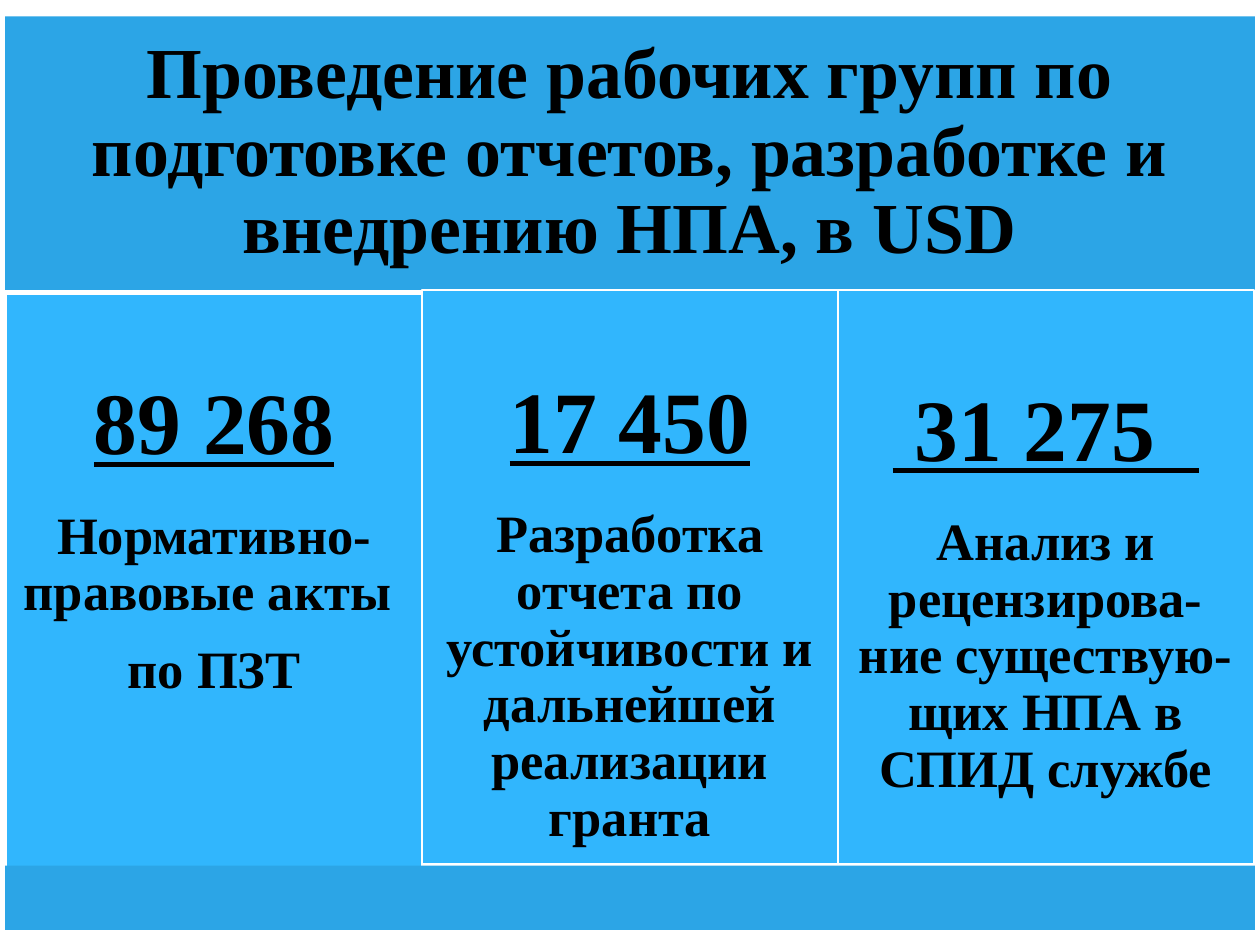
from pptx import Presentation
from pptx.dml.color import RGBColor
from pptx.enum.shapes import MSO_SHAPE as Shape
from pptx.enum.text import MSO_ANCHOR as Anchor, MSO_AUTO_SIZE as Fit, PP_ALIGN as Align
from pptx.util import Inches, Pt

FONT = "Times New Roman"
DARK = RGBColor(0x2C, 0xA5, 0xE6)
LIGHT = RGBColor(0x31, 0xB6, 0xFD)
WHITE = RGBColor(0xFF, 0xFF, 0xFF)
BLACK = RGBColor(0, 0, 0)

TITLE = "Проведение рабочих групп по подготовке отчетов, разработке и внедрению НПА, в USD"
COLUMNS = [
    ("89 268", ["Нормативно-правовые акты ", "по ПЗТ"], 2.33, 0.1, 0.68),
    ("17 450", ["Разработка отчета по устойчивости и дальнейшей реализации гранта"], 2.3, 0.1, 0.7),
    (" 31 275  ", ["Анализ и рецензирова-ние существую-щих НПА в СПИД службе"], 2.3, 0.11, 0.76),
]
LEFT, WIDTH = 0.04, 9.92
COL_W, COL_H = 3.3, 4.56


def place(shape, left, top, width, height, color):
    shape.left, shape.top = Inches(left), Inches(top)
    shape.width, shape.height = Inches(width), Inches(height)
    shape.fill.solid()
    shape.fill.fore_color.rgb = color
    shape.line.fill.background()


def add_box(slide, left, top, width, height, color):
    box = slide.shapes.add_shape(Shape.RECTANGLE, 0, 0, 0, 0)
    box.shadow.inherit = False
    place(box, left, top, width, height, color)
    return box


def set_frame(frame, anchor, side, top):
    frame.word_wrap = True
    frame.auto_size = Fit.NONE
    frame.vertical_anchor = anchor
    frame.margin_left = frame.margin_right = frame.margin_bottom = Inches(side)
    frame.margin_top = Inches(top)


def set_para(para, text, size, after=0, under=False):
    para.text = text
    para.alignment = Align.CENTER
    para.line_spacing = 0.9
    para.space_before, para.space_after = Pt(0), Pt(after)
    font = para.font
    font.name, font.size, font.bold = FONT, Pt(size), True
    font.underline = under
    font.color.rgb = BLACK


def main():
    deck = Presentation()
    deck.slide_width, deck.slide_height = Inches(10), Inches(7.5)
    slide = deck.slides.add_slide(deck.slide_layouts[5])

    title = slide.shapes.title
    place(title, LEFT, 0.13, WIDTH, 2.17, DARK)
    set_frame(title.text_frame, Anchor.MIDDLE, 0.17, 0.17)
    set_para(title.text_frame.paragraphs[0], TITLE, 41)

    for i, (sum_, notes, top, side, drop) in enumerate(COLUMNS):
        left = LEFT + 0.01 + i * COL_W
        box = add_box(slide, left, top, COL_W, COL_H, LIGHT)
        box.line.color.rgb = WHITE
        box.line.width = Pt(1.25)
        frame = box.text_frame
        set_frame(frame, Anchor.TOP, side, drop)
        set_para(frame.paragraphs[0], sum_, 50, 20, True)
        for note in notes:
            set_para(frame.add_paragraph(), note, 30, 12)

    add_box(slide, LEFT, 6.87, WIDTH, 0.51, DARK)
    deck.save("out.pptx")


if __name__ == "__main__":
    main()
